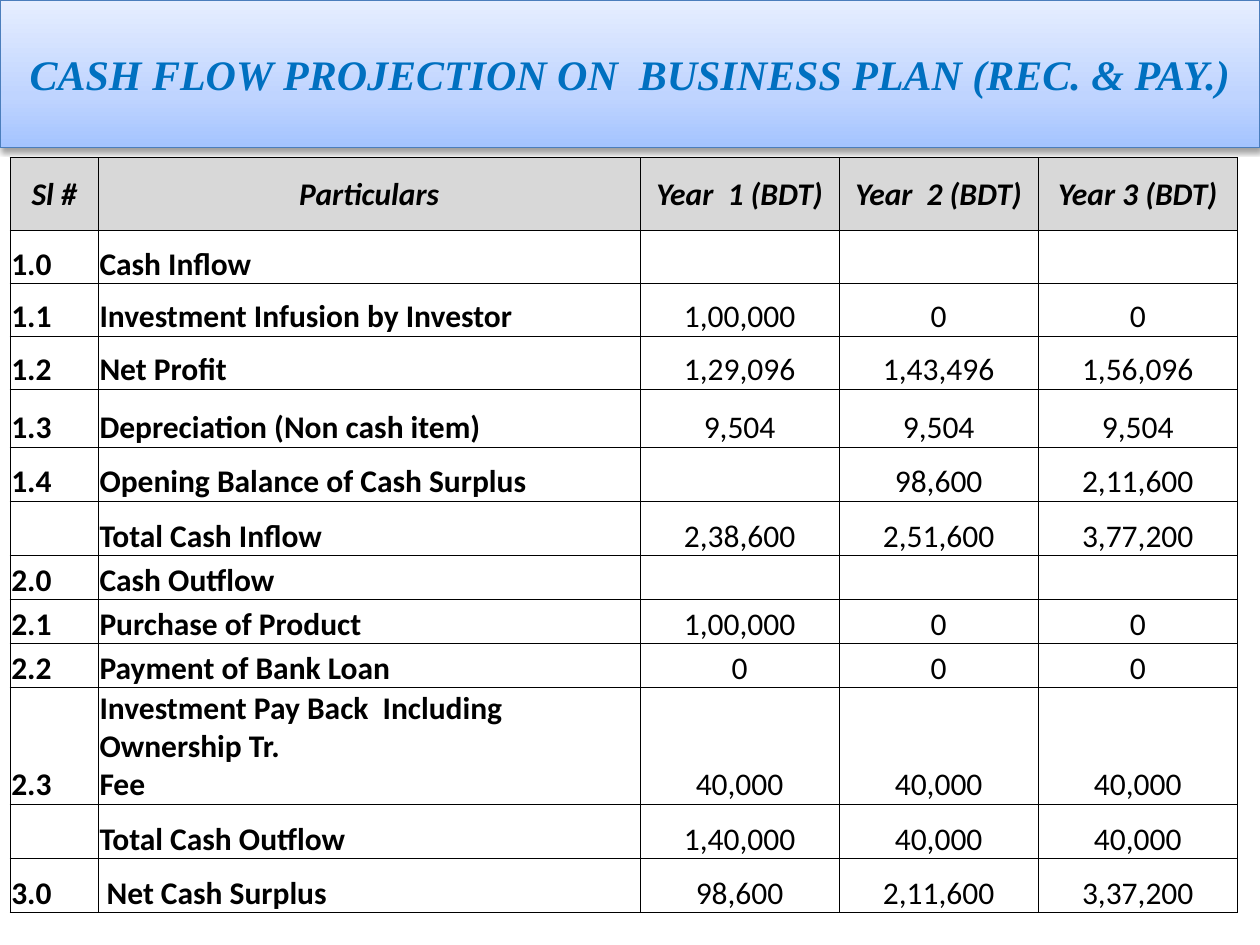
import pptx
import pptx.util
import pptx.dml.color
import pptx.enum.shapes
import pptx.enum.text
import pptx.oxml
import pptx.oxml.ns
import lxml.etree

Inches = pptx.util.Inches
Pt = pptx.util.Pt
RGBColor = pptx.dml.color.RGBColor
Align = pptx.enum.text.PP_ALIGN
Anchor = pptx.enum.text.MSO_ANCHOR
qn = pptx.oxml.ns.qn

BLACK = RGBColor(0x00, 0x00, 0x00)
WHITE = RGBColor(0xFF, 0xFF, 0xFF)
GREY = RGBColor(0xD8, 0xD8, 0xD8)
BLUE = RGBColor(0x00, 0x70, 0xC0)
EDGE = RGBColor(0x4B, 0x7E, 0xBC)
LOW = RGBColor(0xA4, 0xC4, 0xFF)
MID = RGBColor(0xBF, 0xD4, 0xFF)
HIGH = RGBColor(0xE6, 0xEE, 0xFF)

COLS = [0.7, 4.3, 1.58, 1.58, 1.58]
HEAD = ["Sl #", "Particulars", "Year  1 (BDT)", "Year  2 (BDT)", "Year 3 (BDT)"]
HEAD_HIGH = 0.58
# Row height, then the five cells
ROWS = [
    (0.42, "1.0", "Cash Inflow", "", "", ""),
    (0.42, "1.1", "Investment Infusion by Investor", "1,00,000", "0", "0"),
    (0.42, "1.2", "Net Profit", "1,29,096", "1,43,496", "1,56,096"),
    (0.46, "1.3", "Depreciation (Non cash item)", "9,504", "9,504", "9,504"),
    (0.43, "1.4", "Opening Balance of Cash Surplus", "", "98,600", "2,11,600"),
    (0.43, "", "Total Cash Inflow", "2,38,600", "2,51,600", "3,77,200"),
    (0.35, "2.0", "Cash Outflow", "", "", ""),
    (0.35, "2.1", "Purchase of Product", "1,00,000", "0", "0"),
    (0.35, "2.2", "Payment of Bank Loan", "0", "0", "0"),
    (0.52, "2.3", "Investment Pay Back  Including Ownership Tr.\nFee",
     "40,000", "40,000", "40,000"),
    (0.43, "", "Total Cash Outflow", "1,40,000", "40,000", "40,000"),
    (0.43, "3.0", " Net Cash Surplus", "98,600", "2,11,600", "3,37,200"),
]


def put_text(frame, text, font="Calibri", size=18, color=BLACK,
             bold=False, italic=False, align=Align.LEFT):
    frame.text = text
    for para in frame.paragraphs:
        para.alignment = align
        style = para.font
        style.name, style.size = font, Pt(size)
        style.bold, style.italic = bold, italic
        style.color.rgb = color
        for run in para.runs:
            run.font.name, run.font.size = font, Pt(size)
            run.font.bold, run.font.italic = bold, italic
            run.font.color.rgb = color


def add_node(parent, tag, **attrs):
    node = lxml.etree.SubElement(parent, qn(tag))
    for key, value in attrs.items():
        node.set(key, str(value))
    return node


def shade(shape, stops, angle):
    shape.fill.gradient()
    shape.fill.gradient_angle = angle
    group = shape.element.spPr.find(".//" + qn("a:gsLst"))
    for old in list(group):
        group.remove(old)
    for place, color in stops:
        stop = add_node(group, "a:gs", pos=place * 1000)
        add_node(stop, "a:srgbClr", val=color)


def drop_shadow(shape):
    shape.shadow.inherit = False
    effects = shape.element.spPr.find(qn("a:effectLst"))
    outer = add_node(effects, "a:outerShdw", blurRad=Pt(3.1), dist=Pt(1.6),
                     dir=90 * 60000, rotWithShape=0)
    color = add_node(outer, "a:srgbClr", val=BLACK)
    add_node(color, "a:alpha", val=38000)


def add_banner(slide, text):
    banner = slide.shapes.add_shape(
        pptx.enum.shapes.MSO_SHAPE.RECTANGLE, 0, 0, Inches(10), Inches(1.17))
    shade(banner, [(0, LOW), (35, MID), (100, HIGH)], 90)
    banner.line.color.rgb = EDGE
    banner.line.width = Pt(0.75)
    drop_shadow(banner)
    frame = banner.text_frame
    frame.word_wrap = True
    frame.vertical_anchor = Anchor.MIDDLE
    put_text(frame, text, font="Times New Roman", size=24, color=BLUE,
             bold=True, italic=True, align=Align.CENTER)


def add_edges(cell):
    props = cell._tc.get_or_add_tcPr()
    for spot, side in enumerate(("a:lnL", "a:lnR", "a:lnT", "a:lnB")):
        line = add_node(props, side, w=Pt(0.5))
        add_node(add_node(line, "a:solidFill"), "a:srgbClr", val=BLACK)
        props.insert(spot, line)  # borders come before the fill


def fill_cell(cell, text, color, anchor, **style):
    cell.margin_left = cell.margin_right = cell.margin_top = Inches(0.01)
    cell.margin_bottom = 0
    cell.vertical_anchor = anchor
    if color is None:
        cell.fill.background()
    else:
        cell.fill.solid()
        cell.fill.fore_color.rgb = color
    add_edges(cell)
    put_text(cell.text_frame, text, **style)


def add_grid(slide):
    frame = slide.shapes.add_table(
        len(ROWS) + 1, len(COLS), Inches(0.08), Inches(1.25),
        Inches(9.75), Inches(5.98))
    table = frame.table
    table.first_row = table.horz_banding = False
    for col, wide in zip(table.columns, COLS):
        col.width = Inches(wide)

    # Heading row
    table.rows[0].height = Inches(HEAD_HIGH)
    for col, text in enumerate(HEAD):
        fill_cell(table.cell(0, col), text, GREY, Anchor.MIDDLE,
                  bold=True, italic=True, align=Align.CENTER)

    # Bold labels on the left, centred amounts on the right
    for row, (high, *texts) in enumerate(ROWS, 1):
        table.rows[row].height = Inches(high)
        for col, text in enumerate(texts):
            label = col < 2
            clear = label and texts[0] == "2.2"
            fill_cell(table.cell(row, col), text, None if clear else WHITE,
                      Anchor.BOTTOM, bold=label,
                      align=Align.LEFT if label else Align.CENTER)
    frame.height = Inches(5.98)


def main():
    deck = pptx.Presentation()
    deck.slide_width, deck.slide_height = Inches(10), Inches(7.5)
    slide = deck.slides.add_slide(deck.slide_layouts[6])
    add_banner(slide, "CASH FLOW PROJECTION ON  BUSINESS PLAN (REC. & PAY.)")
    add_grid(slide)
    deck.save("out.pptx")


if __name__ == "__main__":
    main()
